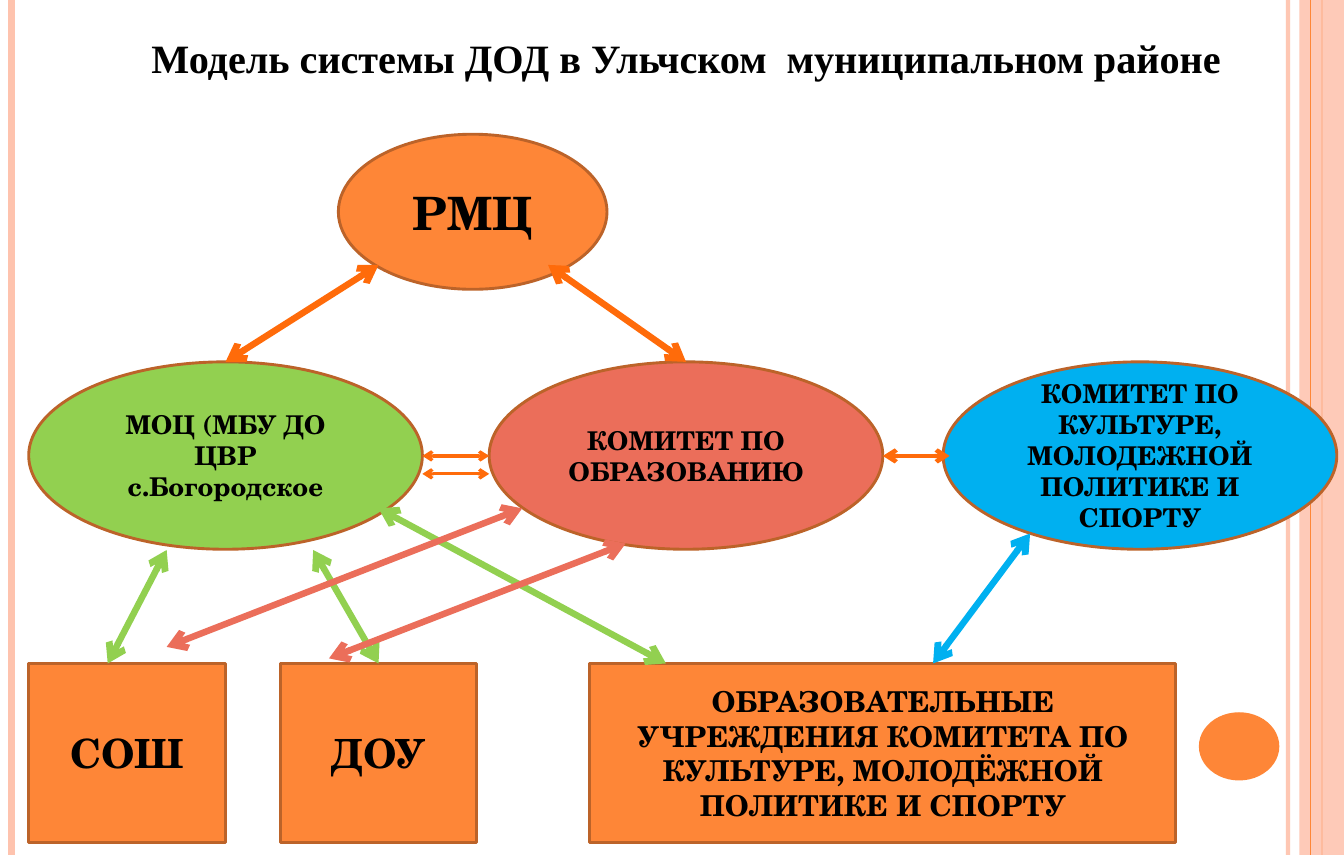
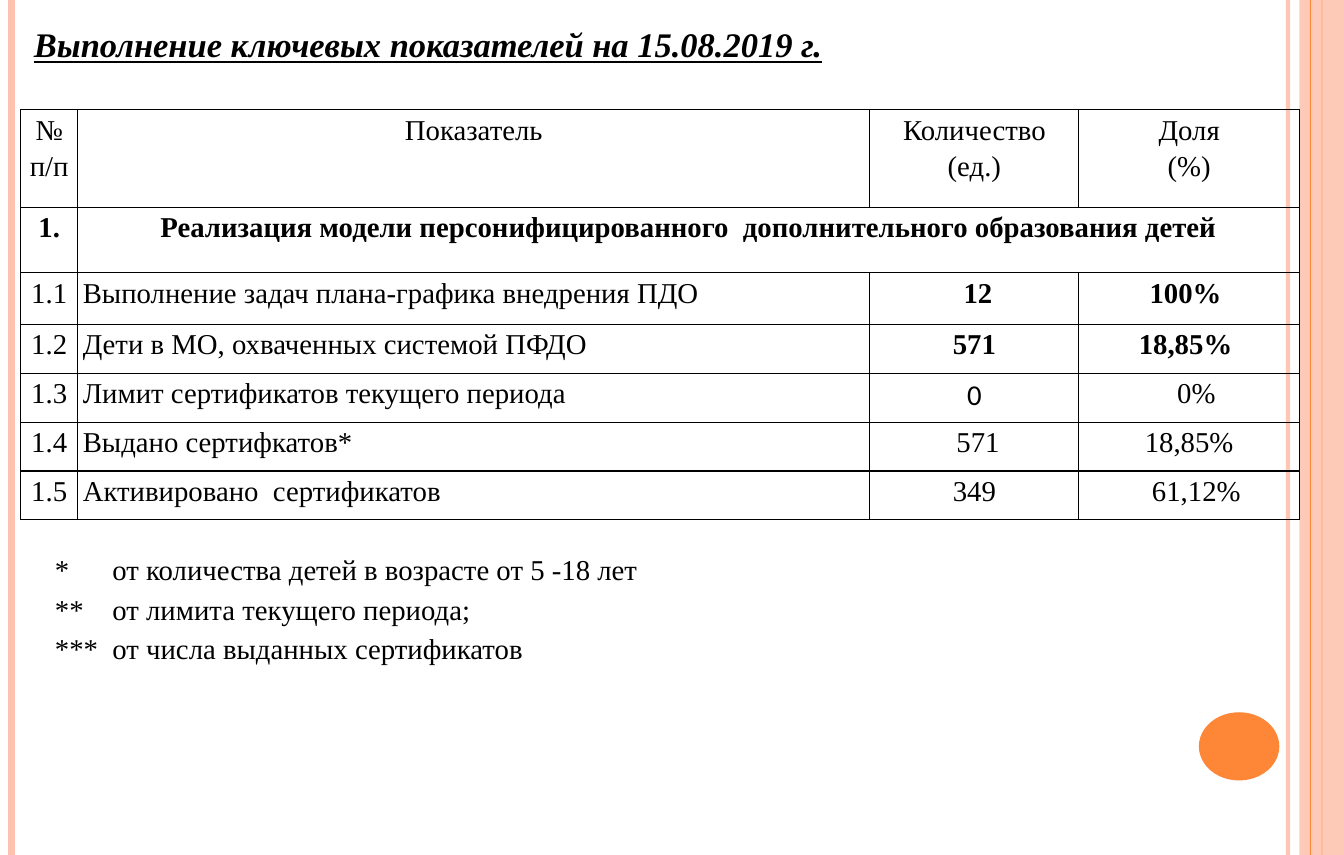
from dataclasses import dataclass

from lxml.etree import SubElement
from pptx import Presentation
from pptx.dml.color import RGBColor
from pptx.enum.shapes import MSO_CONNECTOR, MSO_SHAPE
from pptx.enum.text import MSO_ANCHOR, MSO_AUTO_SIZE, PP_ALIGN
from pptx.oxml.ns import qn
from pptx.util import Pt

SLIDE_WIDTH, SLIDE_HEIGHT = 935.5, 595.38
SERIF, DIAGRAM_FONT = "Times New Roman", "TeX Gyre Schola"
COLOURS = {
    "black": "000000",
    "peach": "FEC3AE",
    "orange": "FE8637",
    "outline": "BC6329",
    "arrow": "FF6B0A",
    "green": "92D050",
    "red": "EB6E5A",
    "blue": "00B0F0",
}


@dataclass(frozen=True)
class TextStyle:
    size: float
    font: str = SERIF
    bold: bool = False
    italic: bool = False
    underline: bool = False
    align: PP_ALIGN = PP_ALIGN.CENTER
    spacing: float = 1.0


@dataclass(frozen=True)
class Box:
    left: float
    top: float
    width: float
    height: float


@dataclass(frozen=True)
class Node:
    text: str
    kind: MSO_SHAPE
    box: Box
    colour: str
    size: float


@dataclass(frozen=True)
class Arrow:
    start: tuple[float, float]
    end: tuple[float, float]
    colour: str
    width: float = 4.5
    target: str = ""


@dataclass(frozen=True)
class Stripe:
    x: float
    colour: str
    width: float
    opacity: int = 100


@dataclass(frozen=True)
class Entry:
    """A table cell; a positive shift pads its left side, a negative one its right."""
    text: str
    bold: bool = False
    shift: float = 0
    font: str = SERIF
    span: int = 1


STRIPES_BEHIND_BAND = [
    Stripe(896.5, "peach", 3, 93),
    Stripe(8, "peach", 4.5),
    Stripe(920, "orange", 1.5),
]
STRIPE_ON_BAND = Stripe(912, "orange", 0.75)
SIDE_BAND = Box(904.5, 0, SLIDE_WIDTH - 904.5, SLIDE_HEIGHT)
DISC = Box(834.5, 496, 56, 47.5)


def oval(text: str, left: float, colour: str) -> Node:
    return Node(text, MSO_SHAPE.OVAL, Box(left, 252, 274, 130.5), colour, 18)


def institution(text: str, left: float, width: float, size: float) -> Node:
    return Node(text, MSO_SHAPE.RECTANGLE, Box(left, 462, width, 124.5), "orange", size)


NODES = [
    Node("РМЦ", MSO_SHAPE.OVAL, Box(235.5, 93.5, 187, 108), "orange", 32),
    oval("МОЦ (МБУ ДО ЦВР с.Богородское", 20, "green"),
    oval("КОМИТЕТ ПО ОБРАЗОВАНИЮ", 340.5, "red"),
    oval("КОМИТЕТ ПО КУЛЬТУРЕ, МОЛОДЕЖНОЙ ПОЛИТИКЕ И СПОРТУ", 656.5, "blue"),
    institution("СОШ", 20, 137, 28),
    institution("ДОУ", 195, 137, 28),
    institution("ОБРАЗОВАТЕЛЬНЫЕ УЧРЕЖДЕНИЯ КОМИТЕТА ПО КУЛЬТУРЕ, "
                "МОЛОДЁЖНОЙ ПОЛИТИКЕ И СПОРТУ", 410.5, 408, 20),
]
ARROWS = [
    Arrow((263.5, 184.5), (157, 252), "arrow"),
    Arrow((381.5, 184.5), (477.5, 252), "arrow"),
    Arrow((294, 317.5), (340.5, 317.5), "arrow", 2.25),
    Arrow((614.5, 317.5), (661, 317.5), "arrow", 3),
    Arrow((294, 330), (340.5, 330), "arrow", 2.25),
    Arrow((116, 383), (75, 462), "green"),
    Arrow((218, 383), (263.5, 462), "green", target="ДОУ"),
    Arrow((263.5, 354), (463.5, 462), "green"),
    Arrow((363.5, 354), (116, 450.5), "red"),
    Arrow((435.5, 378.5), (229, 458.5), "red"),
    Arrow((717, 371.5), (649.5, 462), "blue"),
]

COLUMN_WIDTHS = [39.5, 551.5, 145.5, 153.5]
ROW_HEIGHTS = [68, 45.5, 36, 34, 34, 34, 34]
INDICATORS = [
    [Entry("№ п/п"), Entry("Показатель"), Entry("Количество (ед.)"), Entry("Доля\n(%)")],
    [Entry("1.", True),
     Entry("Реализация модели персонифицированного  дополнительного образования детей",
           True, span=3)],
    [Entry("1.1"), Entry("Выполнение задач плана-графика внедрения ПДО"),
     Entry("12", True, 5), Entry("100%", True, -5)],
    [Entry("1.2"), Entry("Дети в МО, охваченных системой ПФДО"),
     Entry("571", True), Entry("18,85%", True, -5)],
    [Entry("1.3"), Entry("Лимит сертификатов текущего периода"),
     Entry("0", font="Calibri"), Entry("0%", shift=10)],
    [Entry("1.4"), Entry("Выдано сертифкатов*"), Entry("571", shift=5), Entry("18,85%")],
    [Entry("1.5"), Entry("Активировано  сертификатов"),
     Entry("349"), Entry("61,12%", shift=10)],
]
FOOTNOTES = [
    ("*", "от количества детей в возрасте от 5 -18 лет"),
    ("**", "от лимита текущего периода;"),
    ("***", "от числа выданных сертификатов"),
]


def rgb(name: str) -> RGBColor:
    return RGBColor.from_string(COLOURS[name])


def set_opacity(shape, percent: int) -> None:
    for colour in shape.element.iter(qn("a:srgbClr")):
        SubElement(colour, qn("a:alpha"), val=str(percent * 1000))


def write(text_frame, text: str, style: TextStyle) -> None:
    text_frame.text = text
    for paragraph in text_frame.paragraphs:
        paragraph.alignment = style.align
        paragraph.line_spacing = style.spacing
        paragraph.space_before = Pt(0)
        for run in paragraph.runs:
            font = run.font
            font.name, font.size = style.font, Pt(style.size)
            font.bold, font.italic = style.bold, style.italic
            font.underline = style.underline
            font.color.rgb = rgb("black")


def fill_placeholder(placeholder, box: Box, text: str, style: TextStyle) -> None:
    placeholder.left, placeholder.top = Pt(box.left), Pt(box.top)
    placeholder.width, placeholder.height = Pt(box.width), Pt(box.height)
    text_frame = placeholder.text_frame
    text_frame.auto_size = MSO_AUTO_SIZE.NONE
    text_frame.vertical_anchor = MSO_ANCHOR.TOP
    write(text_frame, text, style)


def add_filled_shape(slide, kind: MSO_SHAPE, box: Box, colour: str):
    shape = slide.shapes.add_shape(
        kind, Pt(box.left), Pt(box.top), Pt(box.width), Pt(box.height))
    shape.shadow.inherit = False
    shape.fill.solid()
    shape.fill.fore_color.rgb = rgb(colour)
    shape.line.fill.background()
    return shape


def add_line(slide, start: tuple[float, float], end: tuple[float, float],
             colour: str, width: float):
    connector = slide.shapes.add_connector(
        MSO_CONNECTOR.STRAIGHT, *(Pt(value) for value in start + end))
    connector.line.color.rgb = rgb(colour)
    connector.line.width = Pt(width)
    SubElement(connector.element.spPr, qn("a:effectLst"))
    return connector


def add_stripe(slide, stripe: Stripe) -> None:
    line = add_line(slide, (stripe.x, 0), (stripe.x, SLIDE_HEIGHT),
                    stripe.colour, stripe.width)
    if stripe.opacity < 100:
        set_opacity(line, stripe.opacity)


def add_decorated_slide(presentation, layout_index: int):
    slide = presentation.slides.add_slide(presentation.slide_layouts[layout_index])
    for stripe in STRIPES_BEHIND_BAND:
        add_stripe(slide, stripe)
    set_opacity(add_filled_shape(slide, MSO_SHAPE.RECTANGLE, SIDE_BAND, "peach"), 87)
    add_stripe(slide, STRIPE_ON_BAND)
    add_filled_shape(slide, MSO_SHAPE.OVAL, DISC, "orange")
    return slide


def add_node(slide, node: Node):
    shape = add_filled_shape(slide, node.kind, node.box, node.colour)
    shape.line.color.rgb = rgb("outline")
    shape.line.width = Pt(2)
    shape.text_frame.word_wrap = True
    shape.text_frame.vertical_anchor = MSO_ANCHOR.MIDDLE
    write(shape.text_frame, node.text, TextStyle(node.size, DIAGRAM_FONT, bold=True))
    return shape


def add_arrow(slide, arrow: Arrow, shapes: dict) -> None:
    connector = add_line(slide, arrow.start, arrow.end, arrow.colour, arrow.width)
    if arrow.target:
        connector.end_connect(shapes[arrow.target], 0)
    outline = connector.element.spPr.find(qn("a:ln"))
    for end in ("a:headEnd", "a:tailEnd"):
        SubElement(outline, qn(end), type="arrow")


def format_cell(cell) -> None:
    """Gives the cell thin black borders and no fill."""
    properties = cell._tc.get_or_add_tcPr()
    for side in ("a:lnL", "a:lnR", "a:lnT", "a:lnB"):
        border = SubElement(properties, qn(side), w=str(Pt(1)))
        fill = SubElement(border, qn("a:solidFill"))
        SubElement(fill, qn("a:srgbClr"), val=COLOURS["black"])
    cell.fill.background()


def add_indicator_table(slide) -> None:
    table = slide.shapes.add_table(
        len(ROW_HEIGHTS), len(COLUMN_WIDTHS), Pt(14.5), Pt(76.5),
        Pt(sum(COLUMN_WIDTHS)), Pt(sum(ROW_HEIGHTS))).table
    table.first_row = table.horz_banding = False
    for column, width in zip(table.columns, COLUMN_WIDTHS):
        column.width = Pt(width)
    for row, height in zip(table.rows, ROW_HEIGHTS):
        row.height = Pt(height)
    for cell in table.iter_cells():
        format_cell(cell)
    for row_index, entries in enumerate(INDICATORS):
        for column_index, entry in enumerate(entries):
            cell = table.cell(row_index, column_index)
            if entry.span > 1:
                cell.merge(table.cell(row_index, column_index + entry.span - 1))
            cell.margin_left = Pt(3.6 + max(entry.shift, 0))
            cell.margin_right = Pt(3.6 + max(-entry.shift, 0))
            cell.margin_top = cell.margin_bottom = Pt(0)
            is_label = row_index > 1 and column_index == 1
            align = PP_ALIGN.LEFT if is_label else PP_ALIGN.CENTER
            write(cell.text_frame, entry.text,
                  TextStyle(20, entry.font, entry.bold, align=align, spacing=1.15))


def add_footnotes(placeholder) -> None:
    text = "\n".join(f"{mark}\t{note}" for mark, note in FOOTNOTES)
    fill_placeholder(placeholder, Box(31, 377, 594, 90.5), text,
                     TextStyle(20, align=PP_ALIGN.LEFT, spacing=1.15))
    for paragraph in placeholder.text_frame.paragraphs:
        properties = paragraph._p.get_or_add_pPr()
        properties.set("marL", str(Pt(40)))
        properties.set("indent", str(-Pt(40)))
        SubElement(properties, qn("a:buNone"))


def build_model_slide(presentation) -> None:
    slide = add_decorated_slide(presentation, 5)
    fill_placeholder(slide.shapes.title, Box(75, 19.5, 805, 41),
                     "Модель системы ДОД в Ульчском  муниципальном районе",
                     TextStyle(28, bold=True))
    shapes = {node.text: add_node(slide, node) for node in NODES}
    for arrow in ARROWS:
        add_arrow(slide, arrow, shapes)


def build_indicator_slide(presentation) -> None:
    slide = add_decorated_slide(presentation, 1)
    title = slide.shapes.title
    fill_placeholder(title, Box(20, 16, 584, 33),
                     "Выполнение ключевых показателей на 15.08.2019 г.",
                     TextStyle(24, bold=True, italic=True, underline=True,
                               align=PP_ALIGN.LEFT, spacing=0.9))
    title.text_frame.margin_left = title.text_frame.margin_right = Pt(3.6)
    add_indicator_table(slide)
    add_footnotes(slide.placeholders[1])


def main() -> None:
    presentation = Presentation()
    presentation.slide_width, presentation.slide_height = Pt(SLIDE_WIDTH), Pt(SLIDE_HEIGHT)
    build_model_slide(presentation)
    build_indicator_slide(presentation)
    presentation.save("out.pptx")


if __name__ == "__main__":
    main()
